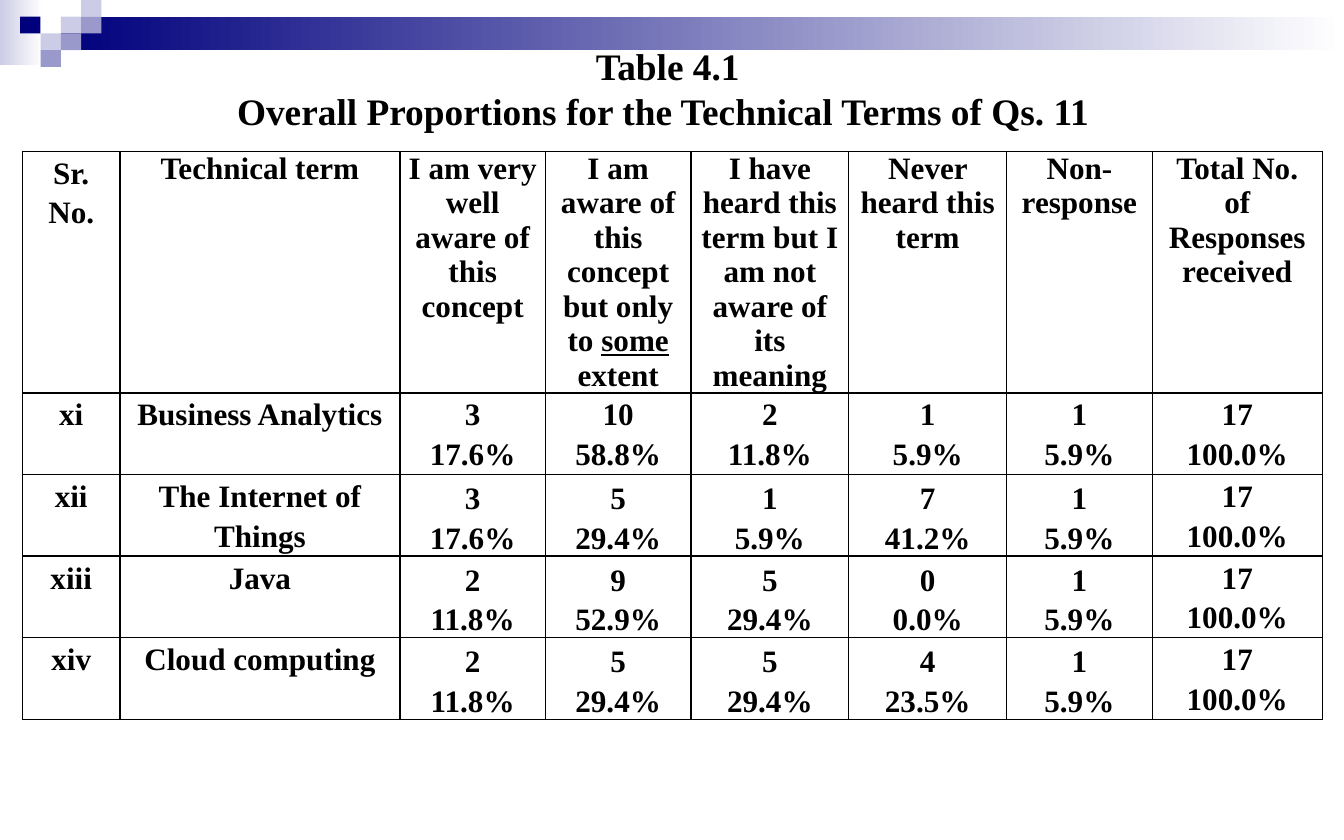
"""Build the slide with the table of technical term awareness."""
from lxml.etree import SubElement
from pptx import Presentation
from pptx.dml.color import RGBColor
from pptx.enum.shapes import MSO_SHAPE
from pptx.enum.text import MSO_ANCHOR, PP_ALIGN
from pptx.oxml.ns import qn
from pptx.util import Cm, Pt

COLORS = {"navy": "00007D", "lilac": "CCCCE6", "violet": "9999CC", "white": "FFFFFF", "black": "000000"}
SQUARE_WIDTH, SQUARE_HEIGHT = 0.46, 0.38
SQUARES = [(3, 1, "lilac"), (4, 0, "lilac"), (4, 1, "violet"), (2, 2, "lilac"),
           (1, 1, "navy"), (3, 2, "violet"), (2, 3, "violet")]
COLUMN_WIDTHS = [2.21, 6.35, 3.3, 3.3, 3.58, 3.58, 3.3, 3.86]
ROW_HEIGHTS = [4.27] + [1.85] * 4
HEADERS = ["Sr. No.", "Technical term", "I am very well aware of this concept",
           "I am aware of this concept but only to _some_ extent",
           "I have heard this term but I am not aware of its meaning",
           "Never heard this term", "Non-response", "Total No. of Responses received"]
TERMS = [("xi", "Business Analytics", [3, 10, 2, 1, 1]),
         ("xii", "The Internet of Things", [3, 5, 1, 7, 1]),
         ("xiii", "Java", [2, 9, 5, 0, 1]),
         ("xiv", "Cloud computing", [2, 5, 5, 4, 1])]


class SlideBuilder:
    """Hold the text style and the slide, and add each kind of element."""

    def __init__(self, slide, font_name):
        self.slide = slide
        self.font_name = font_name

    def rectangle(self, left, top, width, height, color, end_color=None):
        shape = self.slide.shapes.add_shape(MSO_SHAPE.RECTANGLE, Cm(left), Cm(top), Cm(width), Cm(height))
        shape.shadow.inherit = False
        shape.line.fill.background()
        if end_color:
            shape.fill.gradient()
            shape.fill.gradient_angle = 0
            for stop, name in zip(shape.fill.gradient_stops, (color, end_color)):
                stop.color.rgb = RGBColor.from_string(COLORS[name])
        else:
            shape.fill.solid()
            shape.fill.fore_color.rgb = RGBColor.from_string(COLORS[color])

    def paragraphs(self, text_frame, lines, size, spacing=1.0):
        for index, line in enumerate(lines):
            paragraph = text_frame.add_paragraph() if index else text_frame.paragraphs[0]
            paragraph.alignment = PP_ALIGN.CENTER
            paragraph.line_spacing = spacing
            paragraph.font.name = self.font_name
            paragraph.font.size = Pt(size)
            paragraph.font.bold = True
            paragraph.font.color.rgb = RGBColor.from_string(COLORS["black"])
            for position, part in enumerate(line.split("_")):
                run = paragraph.add_run()
                run.text = part
                if position % 2:
                    run.font.underline = True

    def title(self, left, top, width, height, lines):
        text_frame = self.slide.shapes.add_textbox(Cm(left), Cm(top), Cm(width), Cm(height)).text_frame
        text_frame.word_wrap = True
        text_frame.margin_left = text_frame.margin_right = Cm(0.28)
        text_frame.margin_top = text_frame.margin_bottom = Cm(0.15)
        self.paragraphs(text_frame, lines, 24)

    def table(self, left, top, column_widths, row_heights):
        table = self.slide.shapes.add_table(
            len(row_heights), len(column_widths), Cm(left), Cm(top),
            Cm(sum(column_widths)), Cm(sum(row_heights))).table
        for column, width in zip(table.columns, column_widths):
            column.width = Cm(width)
        for row, height in zip(table.rows, row_heights):
            row.height = Cm(height)
        return table

    def cell(self, cell, lines, margin, spacing, anchor):
        cell.margin_left = cell.margin_right = Cm(margin)
        cell.margin_top = cell.margin_bottom = 0
        cell.vertical_anchor = anchor
        properties = cell._tc.get_or_add_tcPr()
        for side in ("a:lnL", "a:lnR", "a:lnT", "a:lnB"):
            border = SubElement(properties, qn(side), w=str(Pt(1)))
            SubElement(SubElement(border, qn("a:solidFill")), qn("a:srgbClr"), val=COLORS["black"])
        cell.fill.background()
        self.paragraphs(cell.text_frame, lines, 20, spacing)


def main():
    presentation = Presentation()
    presentation.slide_width, presentation.slide_height = Cm(30.48), Cm(19.05)
    slide = presentation.slides.add_slide(presentation.slide_layouts[6])
    builder = SlideBuilder(slide, "Times New Roman")

    builder.rectangle(0, 0, 0.97, 1.47, "lilac", "white")
    builder.rectangle(1.38, 0.38, 29.1, 0.76, "navy", "white")
    for column, row, color in SQUARES:
        builder.rectangle(column * SQUARE_WIDTH, row * SQUARE_HEIGHT, SQUARE_WIDTH, SQUARE_HEIGHT, color)

    table = builder.table(0.51, 3.43, COLUMN_WIDTHS, ROW_HEIGHTS)
    for column, header in enumerate(HEADERS):
        builder.cell(table.cell(0, column), [header], 0.18, 1.0 if column else 1.15, MSO_ANCHOR.TOP)
    for row, (number, term, counts) in enumerate(TERMS, start=1):
        total = sum(counts)
        results = [[str(count), f"{count / total:.1%}"] for count in counts + [total]]
        for column, lines in enumerate([[number], [term]] + results):
            at_bottom = row > 1 and 2 <= column <= 6
            anchor = MSO_ANCHOR.BOTTOM if at_bottom else MSO_ANCHOR.TOP
            builder.cell(table.cell(row, column), lines, 0.13, 1.15, anchor)

    builder.title(4.45, 0.84, 21.39, 3.71,
                  ["Table 4.1", "Overall Proportions for the Technical Terms of Qs. 11 "])
    presentation.save("out.pptx")


if __name__ == "__main__":
    main()
